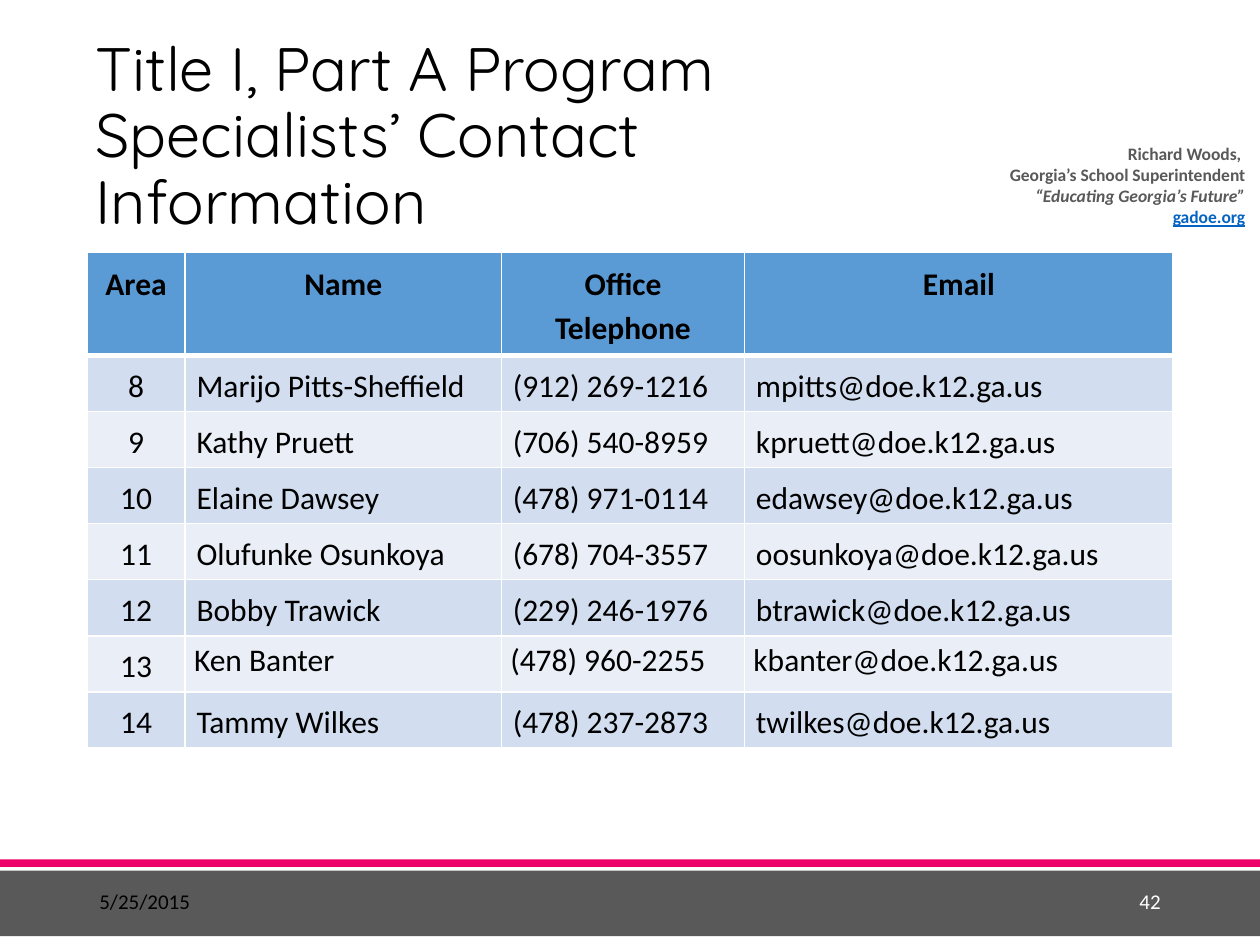
from dataclasses import dataclass

from lxml import etree
from pptx import Presentation
from pptx.dml.color import RGBColor
from pptx.enum.shapes import MSO_SHAPE
from pptx.enum.text import MSO_ANCHOR, PP_ALIGN
from pptx.oxml.ns import qn
from pptx.util import Inches, Pt

RECTANGLE = MSO_SHAPE.RECTANGLE
MIDDLE = MSO_ANCHOR.MIDDLE
LEFT, CENTER, RIGHT = PP_ALIGN.LEFT, PP_ALIGN.CENTER, PP_ALIGN.RIGHT

BLACK = RGBColor(0x00, 0x00, 0x00)
WHITE = RGBColor(0xFF, 0xFF, 0xFF)
GRAY = RGBColor(0x59, 0x59, 0x59)
PINK = RGBColor(0xEC, 0x02, 0x69)
LINK_BLUE = RGBColor(0x05, 0x63, 0xC1)
HEADER_BLUE = RGBColor(0x5B, 0x9B, 0xD5)
BAND_COLORS = (RGBColor(0xD2, 0xDE, 0xEF), RGBColor(0xEA, 0xEF, 0xF7))

BODY_FONT = "Calibri"
TITLE_FONT = "Quicksand"


@dataclass(frozen=True)
class Area:
    left: float
    top: float
    width: float
    height: float

    def lengths(self) -> tuple:
        return tuple(map(Inches, (self.left, self.top, self.width, self.height)))


@dataclass(frozen=True)
class Line:
    text: str
    size: float
    color: RGBColor = BLACK
    name: str = BODY_FONT
    bold: bool = False
    italic: bool = False
    underline: bool = False
    alignment: PP_ALIGN = LEFT
    line_spacing: float = 1.0
    space_after: float = 0


@dataclass(frozen=True)
class TextBlock:
    area: Area
    lines: tuple


@dataclass(frozen=True)
class Bar:
    area: Area
    color: RGBColor


@dataclass(frozen=True)
class Specialist:
    area: str
    name: str
    telephone: str
    email: str
    margins: tuple = (0.09, 0.05)


BARS = (
    Bar(Area(0, 6.91, 10, 0.52), GRAY),
    Bar(Area(-0.02, 6.82, 10.02, 0.06), PINK),
)

SIGNATURE = {"size": 10, "bold": True, "alignment": RIGHT}
TEXT_BLOCKS = (
    TextBlock(Area(7.84, 1.12, 2.14, 0.7), (
        Line("Richard Woods, ", color=GRAY, **SIGNATURE),
        Line("Georgia’s School Superintendent", color=GRAY, **SIGNATURE),
        Line("“Educating Georgia’s Future”", color=GRAY, italic=True, **SIGNATURE),
        Line("gadoe.org", color=LINK_BLUE, underline=True, **SIGNATURE),
    )),
    TextBlock(Area(0.66, 0.37, 6.91, 1.45), (
        Line("Title I, Part A Program Specialists’ Contact Information", 35,
             name=TITLE_FONT, line_spacing=0.9),
    )),
    TextBlock(Area(0.69, 6.95, 2.25, 0.4), (Line("5/25/2015", 12),)),
    TextBlock(Area(7.06, 6.95, 2.25, 0.4), (Line("42", 12, WHITE, alignment=RIGHT),)),
)

TABLE_AREA = Area(0.69, 2, 8.62, 3.9)
COLUMN_WIDTHS = (0.78, 2.51, 1.93, 3.4)
HEADER_HEIGHT, ROW_HEIGHT = 0.82, 0.44
HEADER_MARGINS = (0.12, 0.06)
HEADINGS = ("Area", "Name", "Office Telephone", "Email")
SPECIALISTS = (
    Specialist("8", "Marijo Pitts-Sheffield", "(912) 269-1216", "mpitts@doe.k12.ga.us"),
    Specialist("9", "Kathy Pruett", "(706) 540-8959", "kpruett@doe.k12.ga.us"),
    Specialist("10", "Elaine Dawsey", "(478) 971-0114", "edawsey@doe.k12.ga.us"),
    Specialist("11", "Olufunke Osunkoya", "(678) 704-3557", "oosunkoya@doe.k12.ga.us"),
    Specialist("12", "Bobby Trawick", "(229) 246-1976", "btrawick@doe.k12.ga.us"),
    Specialist("13", "Ken Banter", "(478) 960-2255", "kbanter@doe.k12.ga.us", (0.07, 0)),
    Specialist("14", "Tammy Wilkes", "(478) 237-2873", "twilkes@doe.k12.ga.us"),
)


def set_attributes(target, values: dict) -> None:
    for key, value in values.items():
        setattr(target, key, value)


def write_line(para, line: Line) -> None:
    set_attributes(para, {
        "alignment": line.alignment,
        "line_spacing": line.line_spacing,
        "space_before": Pt(0),
        "space_after": Pt(line.space_after),
    })
    span = para.add_run()
    span.text = line.text
    set_attributes(span.font, {
        "name": line.name,
        "size": Pt(line.size),
        "bold": line.bold,
        "italic": line.italic,
        "underline": line.underline,
    })
    span.font.color.rgb = line.color


def add_bar(page, bar: Bar) -> None:
    shape = page.shapes.add_shape(RECTANGLE, *bar.area.lengths())
    shape.shadow.inherit = False
    shape.fill.solid()
    shape.fill.fore_color.rgb = bar.color
    shape.line.fill.background()


def add_text_block(page, block: TextBlock) -> None:
    frame = page.shapes.add_textbox(*block.area.lengths()).text_frame
    set_attributes(frame, {"word_wrap": True, "vertical_anchor": MIDDLE})
    for index, line in enumerate(block.lines):
        para = frame.add_paragraph() if index else frame.paragraphs[0]
        write_line(para, line)


def add_borders(cell, bottom_width: float) -> None:
    properties = cell._tc.get_or_add_tcPr()
    widths = {"a:lnL": 1, "a:lnR": 1, "a:lnT": 1, "a:lnB": bottom_width}
    for tag, width in widths.items():
        border = etree.SubElement(properties, qn(tag), w=str(Pt(width)))
        fill = etree.SubElement(border, qn("a:solidFill"))
        etree.SubElement(fill, qn("a:srgbClr"), val=str(WHITE))


def fill_cell(cell, line: Line, color: RGBColor, margins: tuple, bottom_width: float) -> None:
    side, edge = map(Inches, margins)
    set_attributes(cell, {
        "margin_left": side, "margin_right": side,
        "margin_top": edge, "margin_bottom": edge,
    })
    add_borders(cell, bottom_width)
    cell.fill.solid()
    cell.fill.fore_color.rgb = color
    write_line(cell.text_frame.paragraphs[0], line)


def add_contact_table(page) -> None:
    frame = page.shapes.add_table(
        len(SPECIALISTS) + 1, len(HEADINGS), *TABLE_AREA.lengths())
    table = frame.table
    for column, width in zip(table.columns, COLUMN_WIDTHS):
        column.width = Inches(width)
    for index, row in enumerate(table.rows):
        row.height = Inches(ROW_HEIGHT if index else HEADER_HEIGHT)

    for column, heading in enumerate(HEADINGS):
        line = Line(heading, 18, bold=True, alignment=CENTER,
                    line_spacing=1.15, space_after=10)
        fill_cell(table.cell(0, column), line, HEADER_BLUE, HEADER_MARGINS, 3)

    for row, person in enumerate(SPECIALISTS, start=1):
        color = BAND_COLORS[(row - 1) % 2]
        values = (person.area, person.name, person.telephone, person.email)
        for column, value in enumerate(values):
            line = Line(value, 18, alignment=LEFT if column else CENTER, line_spacing=1.15)
            margins = person.margins if column else Specialist.margins
            fill_cell(table.cell(row, column), line, color, margins, 1)


def main() -> None:
    deck = Presentation()
    set_attributes(deck, {"slide_width": Inches(10), "slide_height": Inches(7.5)})
    page = deck.slides.add_slide(deck.slide_layouts[6])
    for bar in BARS:
        add_bar(page, bar)
    for block in TEXT_BLOCKS:
        add_text_block(page, block)
    add_contact_table(page)
    deck.save("out.pptx")


if __name__ == "__main__":
    main()
